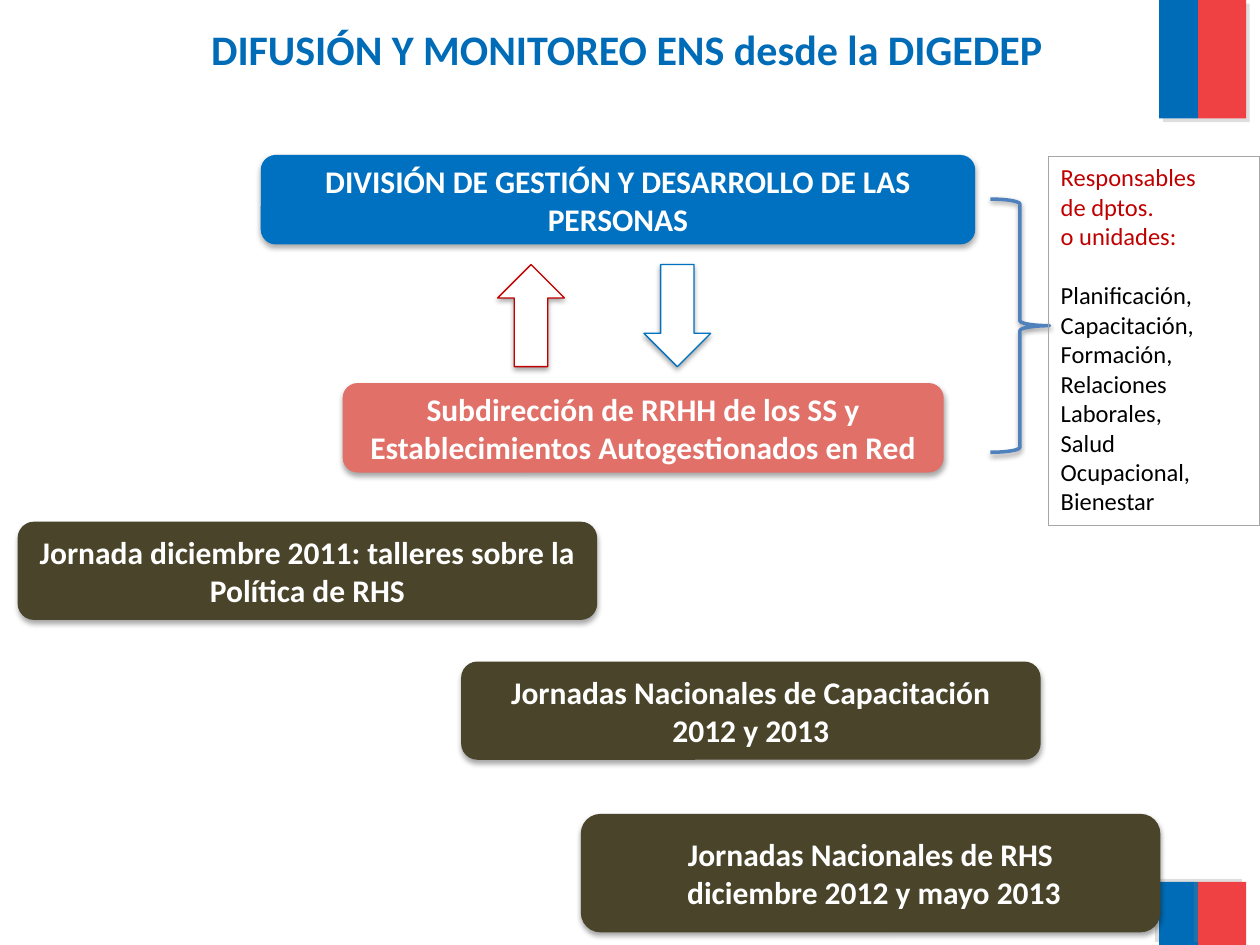
from dataclasses import dataclass

from lxml.etree import SubElement
from pptx import Presentation
from pptx.dml.color import RGBColor
from pptx.enum.shapes import MSO_SHAPE
from pptx.enum.text import MSO_ANCHOR, PP_ALIGN
from pptx.oxml.ns import qn
from pptx.util import Inches, Pt

BLUE, RED, WHITE, OLIVE = "0070C0", "C00000", "FFFFFF", "4A452A"
FLAG_BLUE, FLAG_RED = "006CB7", "EF4144"


@dataclass
class Shade:
    color: str = "000000"
    alpha: int = 35
    blur: float = 3.1
    dist: float = 1.8
    angle: int = 90


@dataclass
class Box:
    left: float
    top: float
    width: float
    height: float
    fill: str
    lines: list[str]


def paint(target, color: str) -> None:
    """Set a solid colour on a fill."""
    target.solid()
    target.fore_color.rgb = RGBColor.from_string(color)


def cast(shape, shade: Shade) -> None:
    """Give a shape an outer shadow."""
    shape.shadow.inherit = False
    effects = shape._element.spPr.find(qn("a:effectLst"))
    outer = SubElement(effects, qn("a:outerShdw"), {
        "blurRad": str(Pt(shade.blur)), "dist": str(Pt(shade.dist)),
        "dir": str(shade.angle * 60000), "rotWithShape": "0"})
    tint = SubElement(outer, qn("a:srgbClr"), val=shade.color)
    SubElement(tint, qn("a:alpha"), val=str(shade.alpha * 1000))


def draw(kind, left: float, top: float, width: float, height: float,
         fill: str | None = None, line: str | None = None,
         weight: float = 0.75, shade: Shade | None = None):
    shape = slide.shapes.add_shape(
        kind, Inches(left), Inches(top), Inches(width), Inches(height))
    if fill:
        paint(shape.fill, fill)
    else:
        shape.fill.background()
    if line:
        paint(shape.line.fill, line)
        shape.line.width = Pt(weight)
    else:
        shape.line.fill.background()
    shape.shadow.inherit = False
    if shade:
        cast(shape, shade)
    return shape


def write(shape, lines: list[str], size: float = 18, color: str = WHITE,
          bold: bool = True, align=PP_ALIGN.CENTER, anchor=MSO_ANCHOR.MIDDLE,
          more: bool = False, gap: float = 0) -> None:
    """Write one paragraph per line; more=True adds to the text present."""
    frame = shape.text_frame
    frame.word_wrap = True
    frame.vertical_anchor = anchor
    for i, text in enumerate(lines):
        para = frame.add_paragraph() if more or i else frame.paragraphs[0]
        para.alignment = align
        if gap and i == 0:
            para.space_before = Pt(gap)
        run = para.add_run()
        run.text = text
        run.font.name = "Calibri"
        run.font.size = Pt(size)
        run.font.bold = bold
        run.font.color.rgb = RGBColor.from_string(color)


deck = Presentation()
deck.slide_width, deck.slide_height = Inches(10), Inches(7.5)
slide = deck.slides.add_slide(deck.slide_layouts[5])

# Flag bars at the top and bottom right
for top, height, angle in ((0, 0.94, 45), (7, 0.5, 215)):
    for left, width, color in ((9.2, 0.31, FLAG_BLUE), (9.51, 0.38, FLAG_RED)):
        draw(MSO_SHAPE.RECTANGLE, left, top, width, height, color,
             shade=Shade("808080", 25, 0, 3, angle))

# Title
title = slide.shapes.title
title.left, title.top = Inches(0.05), Inches(0.13)
title.width, title.height = Inches(9.85), Inches(0.51)
write(title, ["DIFUSIÓN Y MONITOREO ENS desde la DIGEDEP"],
      size=24, color=FLAG_BLUE)

# Units and meetings
boxes = [
    Box(2.07, 1.23, 5.67, 0.71, BLUE,
        ["DIVISIÓN DE GESTIÓN Y DESARROLLO DE LAS PERSONAS"]),
    Box(2.72, 3.04, 4.77, 0.71, "E17068",
        ["Subdirección de RRHH de los SS y Establecimientos "
         "Autogestionados en Red"]),
    Box(0.14, 4.14, 4.6, 0.78, OLIVE,
        ["Jornada diciembre 2011: talleres sobre la Política de RHS"]),
    Box(4.61, 6.46, 4.6, 0.94, OLIVE,
        ["Jornadas Nacionales de RHS", " diciembre 2012 y mayo 2013"]),
    Box(3.66, 5.25, 4.6, 0.78, OLIVE,
        ["Jornadas Nacionales de Capacitación", "2012 y 2013"]),
]
for box in boxes:
    shape = draw(MSO_SHAPE.ROUNDED_RECTANGLE, box.left, box.top, box.width,
                 box.height, box.fill, shade=Shade())
    write(shape, box.lines)

# Arrows between the two units
for left, color, turn in ((3.95, RED, 0), (5.11, BLUE, 180)):
    arrow = draw(MSO_SHAPE.UP_ARROW, left, 2.1, 0.53, 0.81, WHITE, color,
                 shade=Shade())
    arrow.rotation = turn

# Brace and the people in charge
draw(MSO_SHAPE.RIGHT_BRACE, 7.86, 1.58, 0.47, 2.01, line="4F81BD", weight=2,
     shade=Shade(alpha=38, dist=1.6))
panel = slide.shapes.add_textbox(
    Inches(8.32), Inches(1.24), Inches(1.68), Inches(2.93))
paint(panel.line.fill, "A6A6A6")
panel.line.width = Pt(0.75)
style = dict(size=14, bold=False, align=PP_ALIGN.LEFT, anchor=MSO_ANCHOR.TOP)
write(panel, ["Responsables", "de dptos.", "o unidades:"], color=RED, **style)
write(panel, ["Planificación,", "Capacitación,", "Formación,", "Relaciones",
              "Laborales,", "Salud Ocupacional,", "Bienestar"],
      color="000000", more=True, gap=17, **style)

deck.save("out.pptx")
